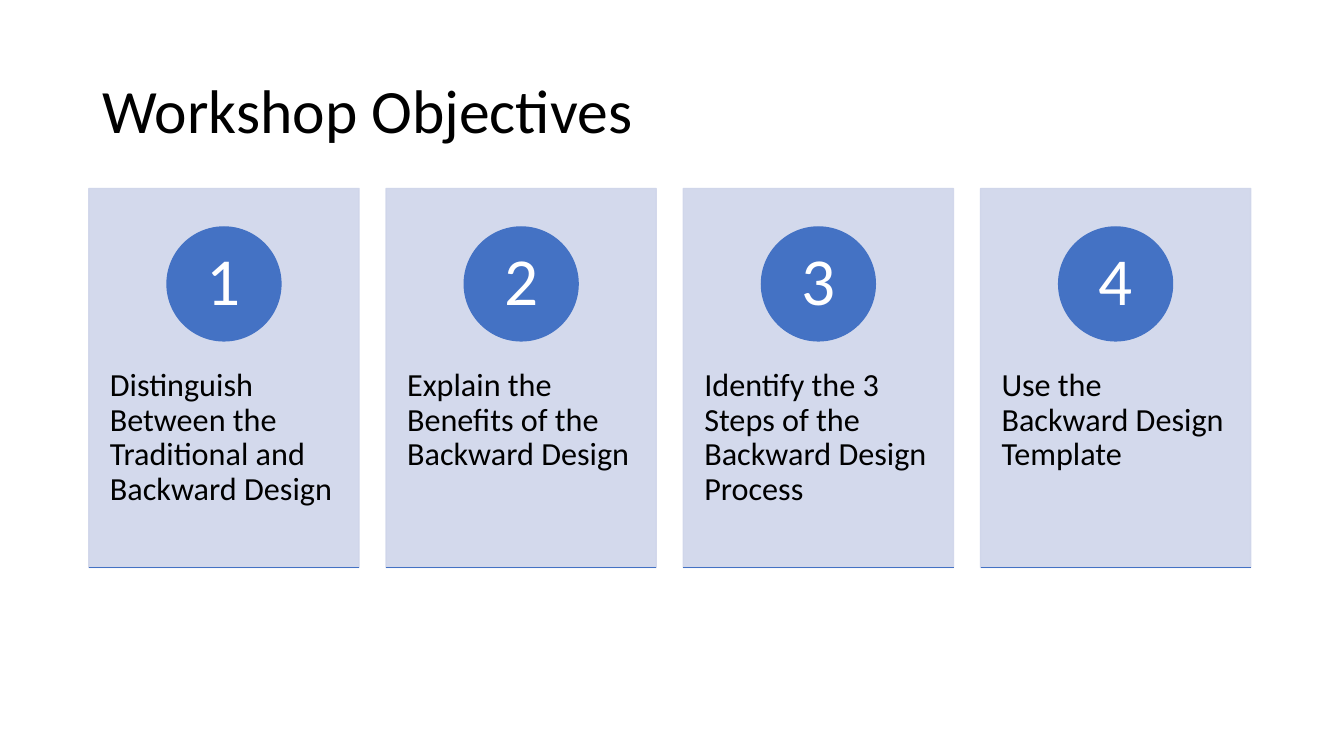
from lxml import etree
from pptx import Presentation
from pptx.dml.color import RGBColor
from pptx.enum.shapes import MSO_CONNECTOR, MSO_SHAPE
from pptx.enum.text import MSO_ANCHOR, PP_ALIGN
from pptx.oxml.ns import qn
from pptx.util import Cm, Pt

BLACK = RGBColor(0x00, 0x00, 0x00)
WHITE = RGBColor(0xFF, 0xFF, 0xFF)
BLUE = RGBColor(0x44, 0x72, 0xC4)
PALE_BLUE = RGBColor(0xCF, 0xD5, 0xEA)
RECTANGLE, OVAL = MSO_SHAPE.RECTANGLE, MSO_SHAPE.OVAL
STRAIGHT = MSO_CONNECTOR.STRAIGHT
TOP, MIDDLE = MSO_ANCHOR.TOP, MSO_ANCHOR.MIDDLE
LEFT, CENTER = PP_ALIGN.LEFT, PP_ALIGN.CENTER

FONT = "Calibri"
CARD_WIDTH, CARD_HEIGHT, CARD_PITCH = Cm(6.81), Cm(9.55), Cm(7.49)
CIRCLE_SIZE = Cm(2.87)
OBJECTIVES = [
    "Distinguish Between the Traditional and Backward Design",
    "Explain the Benefits of the Backward Design",
    "Identify the 3 Steps of the Backward Design Process",
    "Use the Backward Design Template",
]


def write(shape, text, size, color, align, anchor, inset_x, inset_y):
    """Put one formatted paragraph into a shape."""
    frame = shape.text_frame
    frame.text = text
    frame.word_wrap = True
    frame.vertical_anchor = anchor
    frame.margin_left = frame.margin_right = inset_x
    frame.margin_top = frame.margin_bottom = inset_y
    para = frame.paragraphs[0]
    para.alignment = align
    para.line_spacing = 0.9
    font = para.runs[0].font
    font.name = FONT
    font.size = Pt(size)
    font.color.rgb = color


def set_opacity(color_format_parent, percent):
    """Make every solid colour below an element partly transparent."""
    for color in color_format_parent.iter(qn("a:srgbClr")):
        etree.SubElement(color, qn("a:alpha")).set("val", str(percent * 1000))


def add_solid(page, kind, color, left, top, width, height):
    """Add a flat preset shape with fill and outline of one colour."""
    shape = page.shapes.add_shape(kind, left, top, width, height)
    shape.shadow.inherit = False
    shape.fill.solid()
    shape.fill.fore_color.rgb = color
    shape.line.color.rgb = color
    shape.line.width = Pt(1)
    return shape


def add_title(page, left, top, width, height):
    """Add the slide heading."""
    box = page.shapes.add_textbox(left, top, width, height)
    write(box, "Workshop Objectives", 44, BLACK, LEFT, MIDDLE, Cm(0.25), Cm(0.13))


def add_card(page, number, objective, left, top, width, height):
    """Add one numbered objective with its base line."""
    panel = add_solid(page, RECTANGLE, PALE_BLUE, left, top, width, height)
    set_opacity(panel.element.spPr, 90)

    box = page.shapes.add_textbox(left, top + Cm(3.63), width, Cm(5.72))
    write(box, objective, 23, BLACK, LEFT, TOP, Cm(0.53), Cm(0.91))

    circle_left = left + (width - CIRCLE_SIZE) // 2
    circle = add_solid(page, OVAL, BLUE, circle_left, top + Cm(0.97),
                       CIRCLE_SIZE, CIRCLE_SIZE)
    write(circle, str(number), 48, WHITE, CENTER, MIDDLE, Cm(0), Cm(0))

    bottom = top + height
    base = page.shapes.add_connector(STRAIGHT, left, bottom, left + width, bottom)
    base.line.color.rgb = BLUE
    base.line.width = Pt(1)
    etree.SubElement(base.element.spPr, qn("a:effectLst"))


def main():
    """Build the deck and save it."""
    deck = Presentation()
    deck.slide_width, deck.slide_height = Cm(33.87), Cm(19.05)
    page = deck.slides.add_slide(deck.slide_layouts[6])
    add_title(page, Cm(2.34), Cm(1.02), Cm(29.21), Cm(3.68))
    for index, objective in enumerate(OBJECTIVES):
        add_card(page, index + 1, objective, Cm(2.24) + index * CARD_PITCH,
                 Cm(4.75), CARD_WIDTH, CARD_HEIGHT)
    deck.save("out.pptx")


if __name__ == "__main__":
    main()
